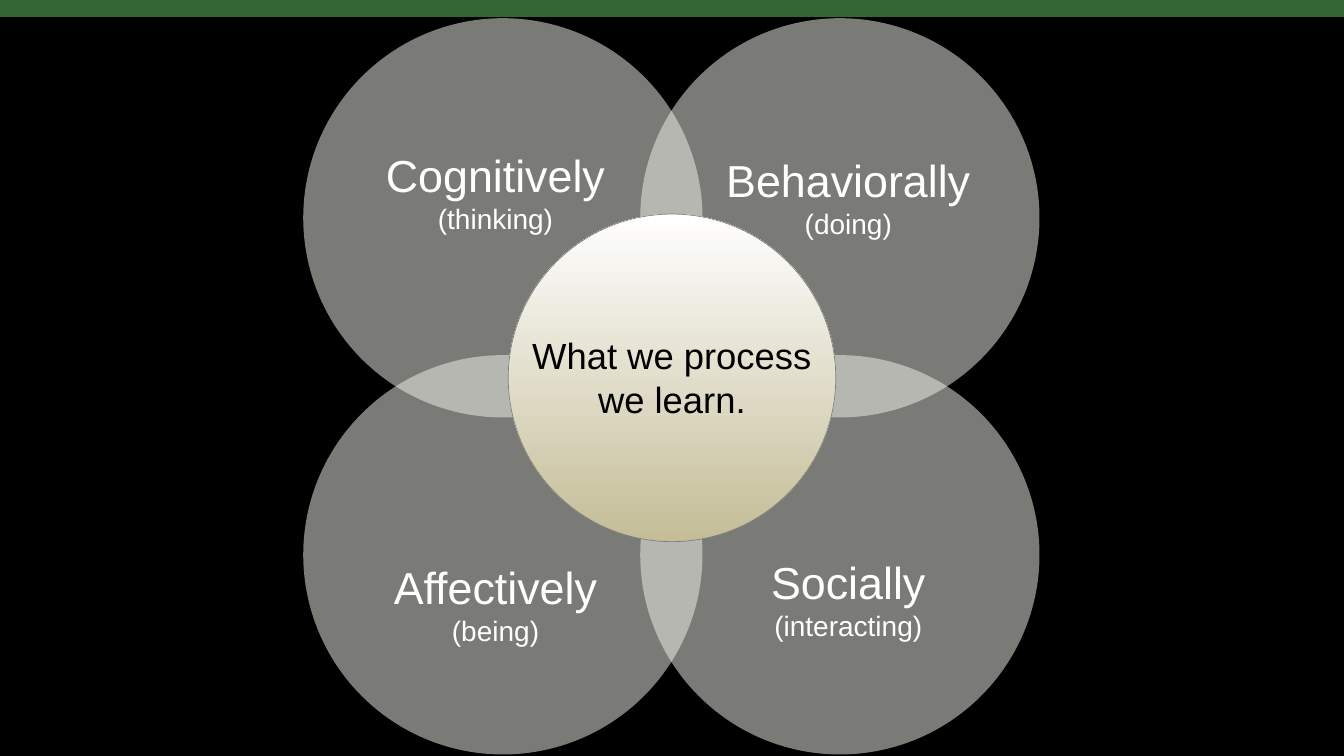
import pptx
import pptx.util
import pptx.dml.color
import pptx.enum.shapes
import pptx.enum.text
import lxml.etree

Pt = pptx.util.Pt
SHAPE = pptx.enum.shapes.MSO_SHAPE

COLORS = {
    "background": "000000",
    "petal": "F5F4ED",
    "sand": "C4BD97",
    "white": "FFFFFF",
    "black": "000000",
    "outline": "808080",
    "band": "336633",
}
WAYS = [
    ("Cognitively", "(thinking)", 0, 0, 102.3),
    ("Behaviorally", "(doing)", 1, 0, 105.3),
    ("Affectively", "(being)", 0, 1, 396.2),
    ("Socially", "(interacting)", 1, 1, 393),
]
CORE_LINES = [("What we process", 26), ("we learn.", 26)]

WIDTH, HEIGHT = 960, 540
PETAL, PETAL_LEFT, PETAL_TOP, PETAL_STEP = 285.2, 216.6, 13, 240.7
LABEL_LEFT, LABEL_STEP, LABEL_WIDTH, LABEL_HEIGHT = 246, 252, 216, 70.6
CORE_LEFT, CORE_TOP, CORE = 363, 152.9, 234


def rgb(name):
    return pptx.dml.color.RGBColor.from_string(COLORS[name])


def add_shape(slide, kind, left, top, width, height, color):
    sp = slide.shapes.add_shape(kind, Pt(left), Pt(top), Pt(width), Pt(height))
    sp.shadow.inherit = False
    sp.fill.solid()
    sp.fill.fore_color.rgb = rgb(color)
    sp.line.fill.background()
    return sp


def add_petal(slide, col, row):
    sp = add_shape(slide, SHAPE.OVAL, PETAL_LEFT + col * PETAL_STEP,
                   PETAL_TOP + row * PETAL_STEP, PETAL, PETAL, "petal")
    ns = "{http://schemas.openxmlformats.org/drawingml/2006/main}"
    color = sp.element.spPr.find(f"{ns}solidFill/{ns}srgbClr")
    lxml.etree.SubElement(color, ns + "alpha", val="50000")


def add_core(slide):
    sp = add_shape(slide, SHAPE.OVAL, CORE_LEFT, CORE_TOP, CORE, CORE, "sand")
    sp.fill.gradient()
    sp.fill.gradient_angle = 90
    for stop, position, color in zip(sp.fill.gradient_stops, (0, 1), ("sand", "white")):
        stop.position = position
        stop.color.rgb = rgb(color)
    sp.line.color.rgb = rgb("outline")
    sp.line.width = Pt(0.5)


def add_label(slide, left, top, width, lines, color):
    sp = slide.shapes.add_textbox(Pt(left), Pt(top), Pt(width), Pt(LABEL_HEIGHT))
    tf = sp.text_frame
    tf.word_wrap = True
    tf.auto_size = pptx.enum.text.MSO_AUTO_SIZE.SHAPE_TO_FIT_TEXT
    for i, (text, size) in enumerate(lines):
        p = tf.add_paragraph() if i else tf.paragraphs[0]
        p.text = text
        p.alignment = pptx.enum.text.PP_ALIGN.CENTER
        p.font.name = "Arial"
        p.font.size = Pt(size)
        p.font.color.rgb = rgb(color)


def main():
    prs = pptx.Presentation()
    prs.slide_width, prs.slide_height = Pt(WIDTH), Pt(HEIGHT)
    s = prs.slides.add_slide(prs.slide_layouts[6])
    s.background.fill.solid()
    s.background.fill.fore_color.rgb = rgb("background")

    for _, _, col, row, _ in reversed(WAYS):
        add_petal(s, col, row)
    add_core(s)
    for name, gloss, col, _, top in WAYS:
        add_label(s, LABEL_LEFT + col * LABEL_STEP, top, LABEL_WIDTH,
                  [(name, 32), (gloss, 20)], "white")
    add_label(s, 366, 234.7, 228, CORE_LINES, "black")
    add_shape(s, SHAPE.RECTANGLE, 0, -0.7, WIDTH, 12.8, "band")
    prs.save("out.pptx")


if __name__ == "__main__":
    main()
